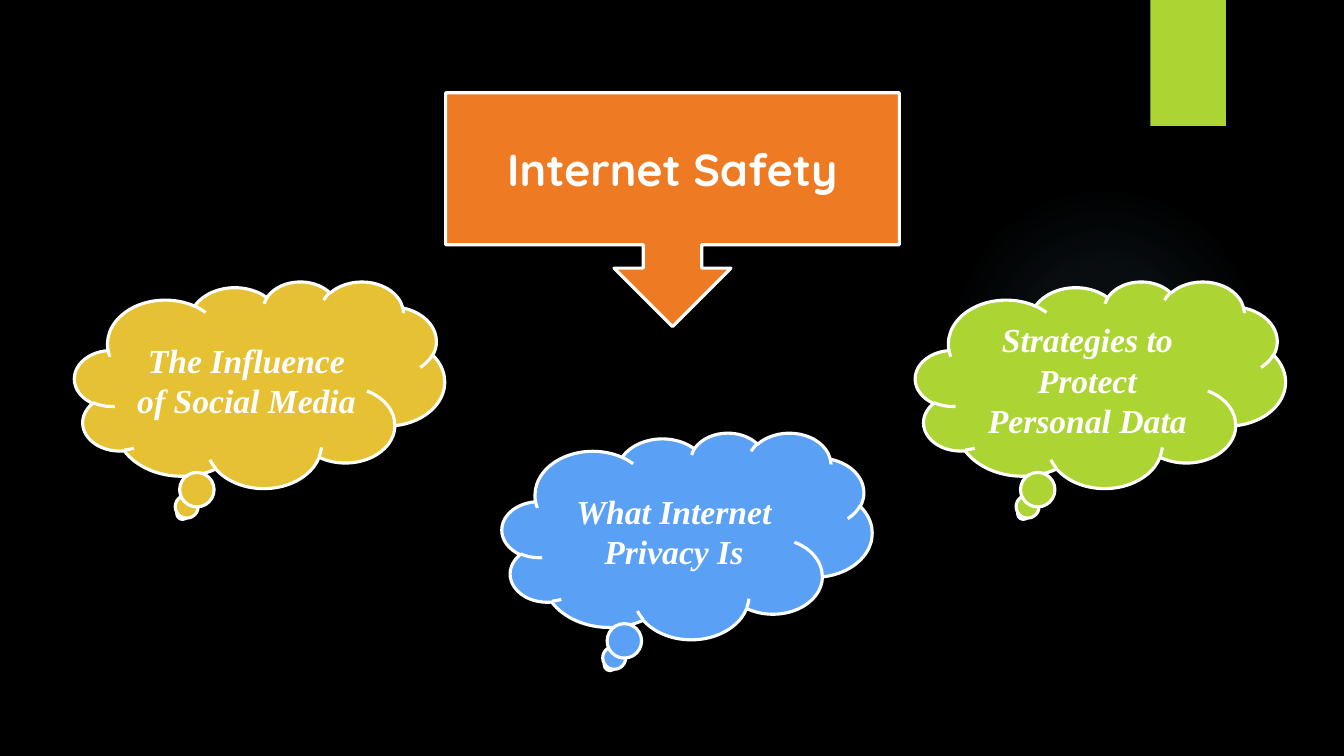
from dataclasses import dataclass

from pptx import Presentation
from pptx.dml.color import RGBColor
from pptx.enum.shapes import MSO_SHAPE
from pptx.enum.text import MSO_ANCHOR, PP_ALIGN
from pptx.oxml import parse_xml
from pptx.oxml.ns import nsdecls
from pptx.shapes.autoshape import Shape
from pptx.slide import Slide
from pptx.util import Inches, Pt

OVAL = MSO_SHAPE.OVAL
RECT = MSO_SHAPE.RECTANGLE
ARROW = MSO_SHAPE.DOWN_ARROW_CALLOUT
CLOUD = MSO_SHAPE.CLOUD_CALLOUT
CENTER = PP_ALIGN.CENTER
MIDDLE = MSO_ANCHOR.MIDDLE

BLACK = RGBColor(0x00, 0x00, 0x00)
WHITE = RGBColor(0xFF, 0xFF, 0xFF)
ORANGE = RGBColor(0xEF, 0x7A, 0x24)
GOLD = RGBColor(0xE6, 0xC1, 0x33)
LIME = RGBColor(0xAC, 0xD4, 0x33)
BLUE = RGBColor(0x5A, 0xA0, 0xF5)
SKY = RGBColor(0x7A, 0xC4, 0xF0)

GLOW_STOPS = [(0, 7), (36, 6), (69, 0)]  # position and opacity, percent


@dataclass
class Cloud:
    text: str
    left: float
    top: float
    color: RGBColor


CLOUDS = [
    Cloud("The Influence of Social Media", 0.74, 2.79, GOLD),
    Cloud("Strategies to Protect Personal Data", 9.08, 2.79, LIME),
    Cloud("What Internet Privacy Is", 4.98, 4.29, BLUE),
]


def add_form(slide: Slide, kind: MSO_SHAPE, left: float, top: float,
             width: float, height: float) -> Shape:
    """Add a preset shape with neither shadow nor line."""
    form = slide.shapes.add_shape(
        kind, Inches(left), Inches(top), Inches(width), Inches(height))
    form.shadow.inherit = False
    form.line.fill.background()
    return form


def add_glow(slide: Slide) -> None:
    """Add the faint round light at the right."""
    glow = add_form(slide, OVAL, 9.41, 1.83, 3.08, 3.08)
    stops = "".join(
        f'<a:gs pos="{place * 1000}"><a:srgbClr val="{SKY}">'
        f'<a:alpha val="{alpha * 1000}"/></a:srgbClr></a:gs>'
        for place, alpha in GLOW_STOPS)
    fill = parse_xml(
        f'<a:gradFill {nsdecls("a")} rotWithShape="1"><a:gsLst>{stops}</a:gsLst>'
        '<a:path path="circle">'
        '<a:fillToRect l="50000" t="50000" r="50000" b="50000"/>'
        '</a:path></a:gradFill>')
    glow.line._ln.addprevious(fill)


def add_tab(slide: Slide) -> None:
    tab = add_form(slide, RECT, 11.41, 0, 0.75, 1.25)
    tab.fill.solid()
    tab.fill.fore_color.rgb = LIME


def style_label(form: Shape, text: str, color: RGBColor, face: str,
                size: int, slant: bool) -> None:
    """Fill and outline a callout and set its centred text."""
    form.fill.solid()
    form.fill.fore_color.rgb = color
    form.line.color.rgb = WHITE
    form.line.width = Pt(2.25)
    frame = form.text_frame
    frame.word_wrap = True
    frame.vertical_anchor = MIDDLE
    para = frame.paragraphs[0]
    para.text = text
    para.alignment = CENTER
    font = para.font
    font.name = face
    font.size = Pt(size)
    font.bold = True
    font.italic = slant
    font.color.rgb = WHITE


def main() -> None:
    deck = Presentation()
    deck.slide_width = Inches(13.33)
    deck.slide_height = Inches(7.5)
    slide = deck.slides.add_slide(deck.slide_layouts[6])
    slide.background.fill.solid()
    slide.background.fill.fore_color.rgb = BLACK

    add_glow(slide)
    add_tab(slide)
    title = add_form(slide, ARROW, 4.42, 0.92, 4.5, 2.32)
    style_label(title, "Internet Safety", ORANGE, "Quicksand", 32, False)
    for cloud in CLOUDS:
        form = add_form(slide, CLOUD, cloud.left, cloud.top, 3.67, 2.05)
        style_label(form, cloud.text, cloud.color, "Times New Roman", 24, True)

    deck.save("out.pptx")


if __name__ == "__main__":
    main()
